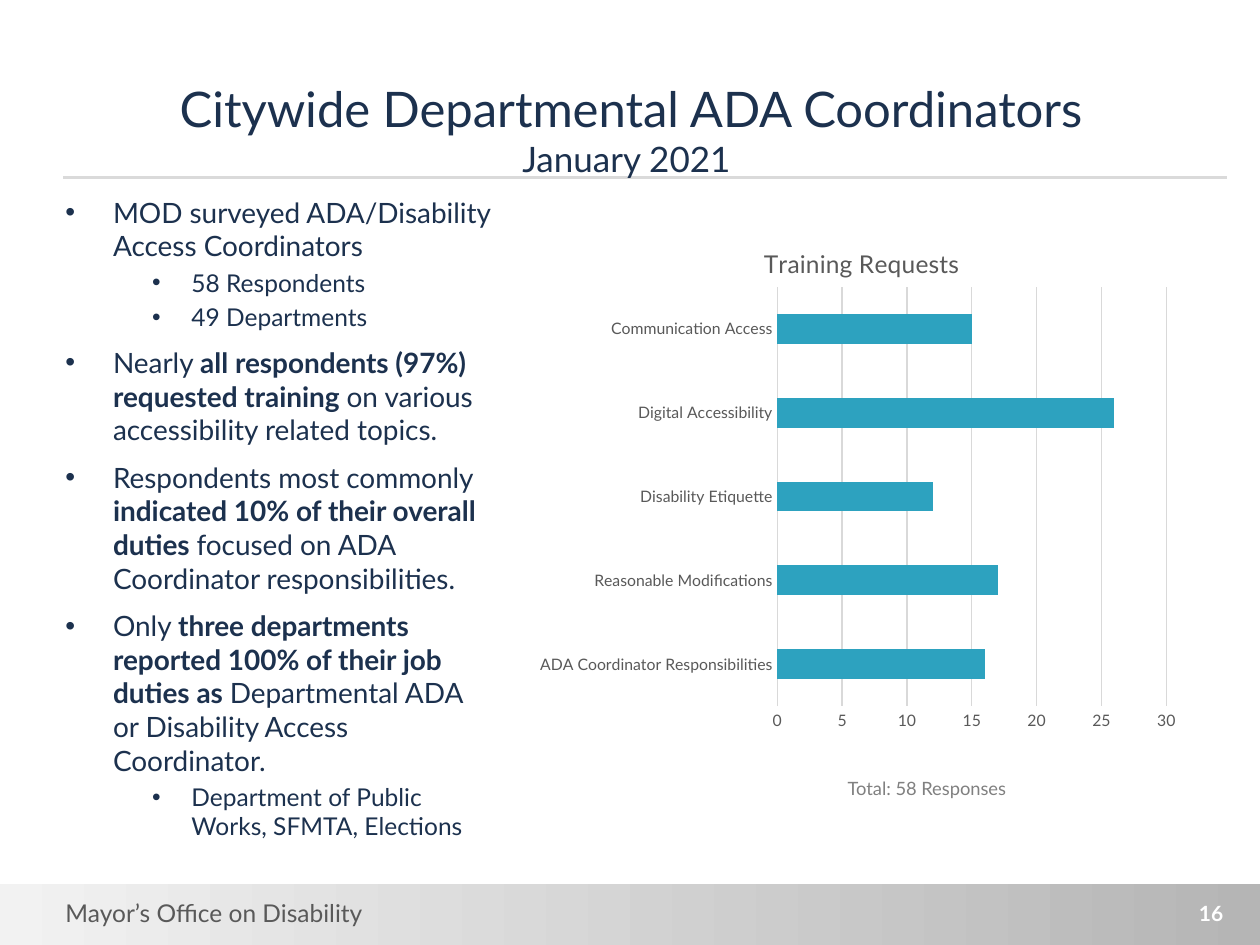
from dataclasses import dataclass
from typing import Any

import lxml.etree
import pptx
import pptx.chart.data
import pptx.dml.color
import pptx.enum.chart
import pptx.enum.shapes
import pptx.enum.text
import pptx.oxml
import pptx.oxml.ns
import pptx.util

Cm = pptx.util.Cm
Pt = pptx.util.Pt
Align = pptx.enum.text.PP_ALIGN
Anchor = pptx.enum.text.MSO_ANCHOR


@dataclass(frozen=True)
class Theme:
    font: str = "Lato"
    navy: str = "1C314E"
    slate: str = "595959"
    gray: str = "808080"
    white: str = "FFFFFF"
    rule: str = "DADADA"
    grid: str = "D9D9D9"
    bar: str = "2DA2BF"
    footer_dark: str = "B5B5B5"
    footer_light: str = "F2F2F2"
    title: float = 28
    subtitle: float = 20
    point: float = 16
    detail: float = 14
    footer: float = 14
    chart_title: float = 14
    page: float = 12
    note: float = 10.5
    axis: float = 9


THEME = Theme()


@dataclass(frozen=True)
class Box:
    left: float
    top: float
    width: float
    height: float

    def lengths(self) -> tuple:
        return tuple(Cm(n) for n in (self.left, self.top, self.width, self.height))


@dataclass(frozen=True)
class Run:
    text: str
    size: float
    color: str = THEME.navy
    bold: bool = False


@dataclass(frozen=True)
class Level:
    depth: int
    size: float
    margin: float
    hanging: float
    before: float


@dataclass(frozen=True)
class Bullet:
    level: Level
    lead: str
    strong: str = ""
    rest: str = ""


POINT = Level(0, THEME.point, 0.96, 0.96, 8)
DETAIL = Level(1, THEME.detail, 2.54, 0.79, 3)

FINDINGS = [
    Bullet(POINT, "MOD surveyed ADA/Disability Access Coordinators"),
    Bullet(DETAIL, "58 Respondents"),
    Bullet(DETAIL, "49 Departments"),
    Bullet(POINT, "Nearly ", "all respondents (97%) requested training ",
           "on various accessibility related topics."),
    Bullet(POINT, "Respondents most commonly ", "indicated 10% of their overall duties ",
           "focused on ADA Coordinator responsibilities."),
    Bullet(POINT, "Only ", "three departments reported 100% of their job duties as ",
           "Departmental ADA or Disability Access Coordinator."),
    Bullet(DETAIL, "Department of Public Works, SFMTA, Elections"),
]

REQUESTS = {
    "ADA Coordinator Responsibilities": 16,
    "Reasonable Modifications": 17,
    "Disability Etiquette": 12,
    "Digital Accessibility": 26,
    "Communication Access": 15,
}


def rgb(color: str) -> pptx.dml.color.RGBColor:
    """Turn a hex string into a colour."""
    return pptx.dml.color.RGBColor.from_string(color)


def apply(target: Any, values: dict) -> None:
    """Set each named attribute of the target."""
    for name, value in values.items():
        setattr(target, name, value)


def style_font(font: Any, size: float, color: str, bold: bool = False) -> None:
    """Give a font the theme face with a size, colour and weight."""
    apply(font, {"name": THEME.font, "size": Pt(size), "bold": bold})
    font.color.rgb = rgb(color)


def add_run(paragraph: Any, run: Run) -> None:
    """Append one styled run to a paragraph."""
    piece = paragraph.add_run()
    piece.text = run.text
    style_font(piece.font, run.size, run.color, run.bold)


def add_frame(slide: Any, box: Box, anchor: Any = Anchor.TOP) -> Any:
    """Add a wrapping text box and return its frame."""
    frame = slide.shapes.add_textbox(*box.lengths()).text_frame
    apply(frame, {"word_wrap": True, "vertical_anchor": anchor})
    return frame


def add_label(slide: Any, box: Box, lines: list[Run], align: Any = Align.LEFT,
              anchor: Any = Anchor.TOP) -> None:
    """Add a one-paragraph label whose runs sit on separate lines."""
    paragraph = add_frame(slide, box, anchor).paragraphs[0]
    paragraph.alignment = align
    for index, run in enumerate(lines):
        if index:
            paragraph.add_line_break()
        add_run(paragraph, run)


def add_bullets(slide: Any, box: Box, bullets: list[Bullet]) -> None:
    """Add the bulleted findings."""
    frame = add_frame(slide, box)
    for index, bullet in enumerate(bullets):
        paragraph = frame.add_paragraph() if index else frame.paragraphs[0]
        level = bullet.level
        apply(paragraph, {"level": level.depth, "space_before": Pt(level.before if index else 0)})
        properties = paragraph._p.get_or_add_pPr()
        properties.set("marL", str(Cm(level.margin)))
        properties.set("indent", str(-Cm(level.hanging)))
        for tag, key, value in (("a:buFont", "typeface", "Arial"), ("a:buChar", "char", "•")):
            lxml.etree.SubElement(properties, pptx.oxml.ns.qn(tag)).set(key, value)
        for text, bold in ((bullet.lead, False), (bullet.strong, True), (bullet.rest, False)):
            if text:
                add_run(paragraph, Run(text, level.size, bold=bold))


def add_footer_band(slide: Any, box: Box) -> None:
    """Add the gradient band at the foot of the slide."""
    band = slide.shapes.add_shape(pptx.enum.shapes.MSO_SHAPE.RECTANGLE, *box.lengths())
    band.shadow.inherit = False
    band.line.fill.background()
    band.fill.gradient()
    band.fill.gradient_angle = 180
    for stop, color in zip(band.fill.gradient_stops, (THEME.footer_dark, THEME.footer_light)):
        stop.color.rgb = rgb(color)


def add_rule(slide: Any, left: float, right: float, top: float) -> None:
    """Add the horizontal rule under the title."""
    rule = slide.shapes.add_connector(
        pptx.enum.shapes.MSO_CONNECTOR.STRAIGHT, Cm(left), Cm(top), Cm(right), Cm(top))
    rule.line.width = Pt(1.5)
    rule.line.color.rgb = rgb(THEME.rule)
    lxml.etree.SubElement(rule._element.spPr, pptx.oxml.ns.qn("a:effectLst"))


def layout_xml(**values: Any) -> Any:
    """Build a manual chart layout from fractions of the chart area."""
    items = "".join(f'<c:{name} val="{value}"/>' for name, value in values.items())
    return pptx.oxml.parse_xml(
        f'<c:layout {pptx.oxml.ns.nsdecls("c")}><c:manualLayout>{items}</c:manualLayout></c:layout>')


def place(element: Any, layout: Any, index: int) -> None:
    """Replace the layout of a chart part."""
    for old in element.findall(pptx.oxml.ns.qn("c:layout")):
        element.remove(old)
    element.insert(index, layout)


def add_requests_chart(slide: Any, box: Box) -> None:
    """Add the bar chart of training requests."""
    kinds = pptx.enum.chart
    data = pptx.chart.data.CategoryChartData()
    data.categories = list(REQUESTS)
    data.add_series("Series 1", list(REQUESTS.values()))
    chart = slide.shapes.add_chart(kinds.XL_CHART_TYPE.BAR_CLUSTERED, *box.lengths(), data).chart
    apply(chart, {"has_legend": False, "has_title": True})
    style_font(chart.font, THEME.axis, THEME.slate)
    title = chart.chart_title
    add_run(title.text_frame.paragraphs[0],
            Run("Training Requests", THEME.chart_title, THEME.slate))
    title.include_in_layout = False
    place(title._element, layout_xml(xMode="edge", yMode="edge", x=0.35, y=0.05), 1)
    place(chart._chartSpace.chart.plotArea, layout_xml(
        layoutTarget="inner", xMode="edge", yMode="edge", x=0.377, y=0.138, w=0.588, h=0.794), 0)

    apply(chart.plots[0], {"gap_width": 182, "vary_by_categories": False})
    bars = chart.plots[0].series[0].format.fill
    bars.solid()
    bars.fore_color.rgb = rgb(THEME.bar)

    requests, topics = chart.value_axis, chart.category_axis
    apply(requests, {"minimum_scale": 0, "maximum_scale": 30, "major_unit": 5,
                     "has_major_gridlines": True})
    for axis in (requests, topics):
        apply(axis, {"major_tick_mark": kinds.XL_TICK_MARK.NONE,
                     "minor_tick_mark": kinds.XL_TICK_MARK.NONE})
        style_font(axis.tick_labels.font, THEME.axis, THEME.slate)
    requests.format.line.fill.background()
    for line in (topics.format.line, requests.major_gridlines.format.line):
        line.width = Pt(0.75)
        line.color.rgb = rgb(THEME.grid)


def main() -> None:
    """Build and save the slide."""
    deck = pptx.Presentation()
    apply(deck, {"slide_width": Cm(25.4), "slide_height": Cm(19.05)})
    slide = deck.slides.add_slide(deck.slide_layouts[6])
    add_footer_band(slide, Box(0, 17.83, 25.4, 1.22))
    add_rule(slide, 1.27, 24.74, 3.58)
    add_label(slide, Box(1.07, 17.98, 17.78, 0.86),
              [Run("Mayor’s Office on Disability", THEME.footer, THEME.slate)])
    add_label(slide, Box(0.91, 1.4, 23.62, 2.34),
              [Run("Citywide Departmental ADA Coordinators", THEME.title),
               Run("January 2021 ", THEME.subtitle)], Align.CENTER, Anchor.BOTTOM)
    add_bullets(slide, Box(1.07, 3.81, 9.14, 13.54), FINDINGS)
    add_label(slide, Box(22.17, 17.98, 2.74, 0.84),
              [Run("16", THEME.page, THEME.white, True)], Align.RIGHT, Anchor.MIDDLE)
    add_label(slide, Box(16.84, 15.54, 3.81, 0.71),
              [Run("Total: 58 Responses", THEME.note, THEME.gray)])
    add_requests_chart(slide, Box(10.64, 4.32, 13.34, 10.64))
    deck.save("out.pptx")


if __name__ == "__main__":
    main()
